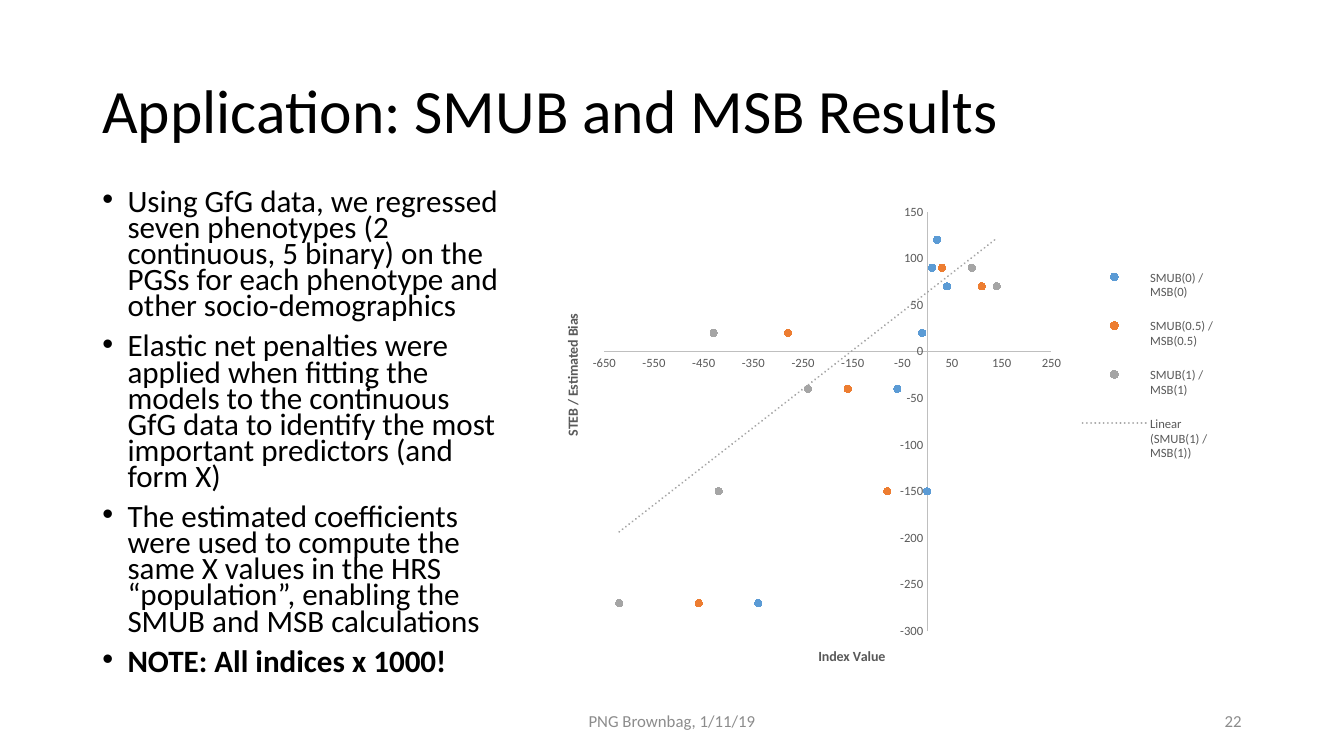
import pptx
import pptx.chart.data
import pptx.dml.color
import pptx.enum.chart
import pptx.enum.dml
import pptx.enum.text
import pptx.oxml
import pptx.oxml.ns
import pptx.util
from lxml import etree

COLORS = {"text": "000000", "footer": "8C8C8C", "label": "595959", "axis": "BFBFBF",
          "blue": "5B9BD5", "orange": "ED7D31", "gray": "A5A5A5"}
FONT = "Calibri"
CELL = 1 / 12  # grid of 160 columns by 90 rows, in inches

BULLETS = [
    "Using GfG data, we regressed seven phenotypes (2 continuous, 5 binary) on the PGSs "
    "for each phenotype and other socio-demographics",
    "Elastic net penalties were applied when fitting the models to the continuous GfG data "
    "to identify the most important predictors (and form X)",
    "The estimated coefficients were used to compute the same X values in the HRS "
    "“population”, enabling the SMUB and MSB calculations",
    "NOTE: All indices x 1000!",
]
BIAS = [-270, 90, 120, 70, -150, 20, -40]
INDICES = [
    ("SMUB(0) / MSB(0)", "blue", [-340, 10, 20, 40, 0, -10, -60]),
    ("SMUB(0.5) / MSB(0.5)", "orange", [-460, 30, 20, 110, -80, -280, -160]),
    ("SMUB(1) / MSB(1)", "gray", [-620, 90, 20, 140, -420, -430, -240]),
]


def rgb(name):
    return pptx.dml.color.RGBColor.from_string(COLORS[name])


def qn(tag):
    return pptx.oxml.ns.qn(tag)


def grid(*cells):
    return [pptx.util.Inches(c * CELL) for c in cells]


def set_font(font, size, color, bold=False):
    values = {"name": FONT, "size": pptx.util.Pt(size), "bold": bold}
    for key, value in values.items():
        setattr(font, key, value)
    font.color.rgb = rgb(color)


def add_text(s, cells, lines, size, color="text", anchor="MIDDLE", **para):
    """Text box with one paragraph per line; para holds paragraph format values."""
    tf = s.shapes.add_textbox(*grid(*cells)).text_frame
    tf.word_wrap = True
    tf.vertical_anchor = getattr(pptx.enum.text.MSO_ANCHOR, anchor)
    for i, line in enumerate(lines):
        p = tf.paragraphs[0] if i == 0 else tf.add_paragraph()
        for key, value in para.items():
            setattr(p, key, value)
        r = p.add_run()
        r.text = line
        set_font(r.font, size, color)
    return tf


def add_bullet(p):
    pPr = p._p.get_or_add_pPr()
    indent = pptx.util.Inches(0.25)
    pPr.set("marL", str(indent))
    pPr.set("indent", str(-indent))
    etree.SubElement(pPr, qn("a:buFont")).set("typeface", "Arial")
    etree.SubElement(pPr, qn("a:buChar")).set("char", "•")


def place(element, after, **shares):
    """Fix a chart part at shares of the chart's size."""
    for old in element.findall(qn("c:layout")):
        element.remove(old)
    layout = etree.Element(qn("c:layout"))
    manual = etree.SubElement(layout, qn("c:manualLayout"))
    if after is None:
        etree.SubElement(manual, qn("c:layoutTarget")).set("val", "inner")
        element.insert(0, layout)
    else:
        element.find(qn(after)).addnext(layout)
    for key in ("xMode", "yMode"):
        etree.SubElement(manual, qn("c:" + key)).set("val", "edge")
    for key, value in shares.items():
        etree.SubElement(manual, qn("c:" + key)).set("val", str(value))


def format_axis(axis, title, low, high, step, x, y):
    values = {"minimum_scale": low, "maximum_scale": high, "major_unit": step,
              "has_major_gridlines": False,
              "major_tick_mark": pptx.enum.chart.XL_TICK_MARK.NONE,
              "minor_tick_mark": pptx.enum.chart.XL_TICK_MARK.NONE}
    for key, value in values.items():
        setattr(axis, key, value)
    set_font(axis.tick_labels.font, 9, "label")
    axis.format.line.color.rgb = rgb("axis")
    axis.format.line.width = pptx.util.Pt(0.75)
    tf = axis.axis_title.text_frame
    tf.text = title
    set_font(tf.paragraphs[0].runs[0].font, 10, "label", True)
    place(axis.axis_title._element, "c:tx", x=x, y=y)
    return tf


def add_trend(series, color):
    trend = pptx.oxml.parse_xml(
        f'<c:trendline {pptx.oxml.ns.nsdecls("c", "a")}><c:spPr><a:ln w="19050" cap="rnd">'
        f'<a:solidFill><a:srgbClr val="{COLORS[color]}"/></a:solidFill>'
        '<a:prstDash val="sysDot"/></a:ln></c:spPr><c:trendlineType val="linear"/>'
        '<c:dispRSqr val="0"/><c:dispEq val="0"/></c:trendline>')
    series._element.find(qn("c:xVal")).addprevious(trend)


def add_scatter(s, cells):
    data = pptx.chart.data.XyChartData()
    for name, _, index_values in INDICES:
        points = data.add_series(name)
        for x, y in zip(index_values, BIAS):
            points.add_data_point(x, y)
    kind = pptx.enum.chart.XL_CHART_TYPE.XY_SCATTER
    chart = s.shapes.add_chart(kind, *grid(*cells), data).chart
    set_font(chart.font, 10, "text")
    chart.has_title = False
    plot = chart.plots[0]
    plot.vary_by_categories = False

    # Markers only, no joining line
    for series, (_, color, _) in zip(plot.series, INDICES):
        series.format.line.fill.background()
        series.marker.style = pptx.enum.chart.XL_MARKER_STYLE.CIRCLE
        series.marker.size = 5
        for fill in (series.marker.format.fill, series.marker.format.line.fill):
            fill.solid()
            fill.fore_color.rgb = rgb(color)
    add_trend(plot.series[2], "gray")

    # Axes
    format_axis(chart.category_axis, "Index Value", -650, 250, 100, 0.41, 0.92)
    tf = format_axis(chart.value_axis, "STEB / Estimated Bias", -300, 150, 50, 0.04, 0.25)
    bodyPr = tf._txBody.find(qn("a:bodyPr"))
    bodyPr.set("rot", "-5400000")
    bodyPr.set("vert", "horz")

    # Legend and plot area
    chart.has_legend = True
    chart.legend.position = pptx.enum.chart.XL_LEGEND_POSITION.RIGHT
    chart.legend.include_in_layout = False
    set_font(chart.legend.font, 9, "label")
    place(chart.legend._element, "c:legendPos", x=0.8, y=0.13, w=0.19, h=0.46)
    place(chart._chartSpace.chart.plotArea, None, x=0.103, y=0.051, w=0.649, h=0.842)


def main():
    prs = pptx.Presentation()
    prs.slide_width, prs.slide_height = grid(160, 90)
    s = prs.slides.add_slide(prs.slide_layouts[6])
    align = pptx.enum.text.PP_ALIGN

    # Title
    add_text(s, (11, 4.8, 138, 17.4), ["Application: SMUB and MSB Results"], 44,
             line_spacing=0.9)

    # Bullets, the last one bold
    tf = add_text(s, (11, 22.2, 49.6, 63), BULLETS, 22.2, anchor="TOP",
                  line_spacing=0.7, space_before=pptx.util.Pt(10))
    for p in tf.paragraphs:
        add_bullet(p)
    tf.paragraphs[-1].runs[0].font.bold = True

    # Chart
    add_scatter(s, (63.5, 22.2, 82, 59.3))

    # Footer
    add_text(s, (53, 83.4, 54, 4.8), ["PNG Brownbag, 1/11/19"], 12, "footer",
             alignment=align.CENTER)
    add_text(s, (113, 83.4, 36, 4.8), ["22"], 12, "footer", alignment=align.RIGHT)

    prs.save("out.pptx")


if __name__ == "__main__":
    main()
